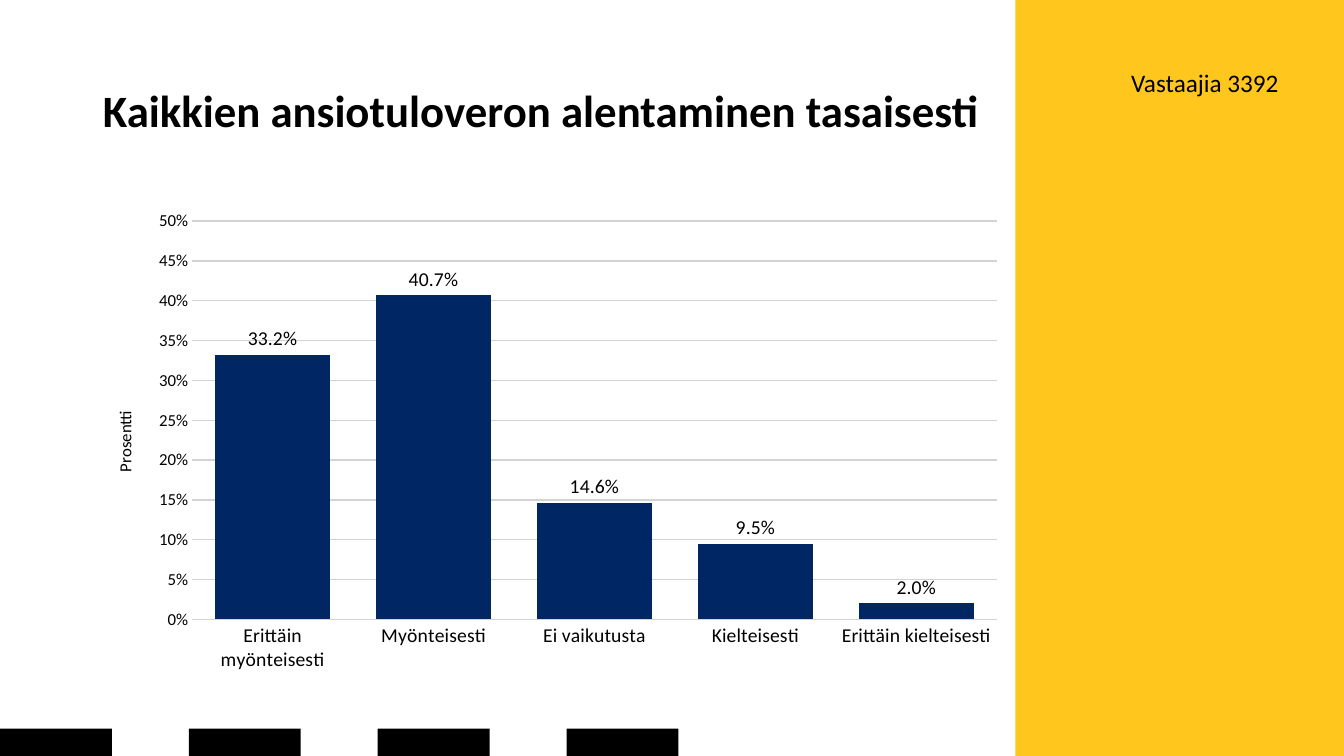
from pptx import Presentation
from pptx.chart import data
from pptx.dml.color import RGBColor
from pptx.enum import chart as charts, shapes, text
from pptx.util import Inches, Pt

COLORS = {"yellow": "FFC61E", "black": "000000", "navy": "002663",
          "grid": "D3D3D3", "white": "FFFFFF"}
FONT = "Calibri"
LEFT, PANEL_LEFT = 0.92, 10.07
WIDTH, HEIGHT = 13.33, 7.5

deck = Presentation()
deck.slide_width, deck.slide_height = Inches(WIDTH), Inches(HEIGHT)
page = deck.slides.add_slide(deck.slide_layouts[5])


def style(font, size, bold=False):
    font.name, font.size, font.bold = FONT, Pt(size), bold
    font.color.rgb = RGBColor.from_string(COLORS["black"])


def block(left, top, width, height, color):
    shape = page.shapes.add_shape(shapes.MSO_SHAPE.RECTANGLE, Inches(left),
                                  Inches(top), Inches(width), Inches(height))
    shape.shadow.inherit = False
    shape.fill.solid()
    shape.fill.fore_color.rgb = RGBColor.from_string(COLORS[color])
    shape.line.fill.background()


# Yellow side panel and the row of black blocks
block(PANEL_LEFT, 0, WIDTH - PANEL_LEFT, HEIGHT, "yellow")
for column in range(4):
    block(column * 1.873, 7.23, 1.11, 0.27, "black")

# Title
title = page.shapes.title
title.left, title.top = Inches(LEFT), Inches(0.4)
title.width, title.height = Inches(PANEL_LEFT - LEFT), Inches(1.45)
title.text_frame.word_wrap = True
title.text_frame.auto_size = text.MSO_AUTO_SIZE.NONE
title.text_frame.vertical_anchor = text.MSO_ANCHOR.MIDDLE
para = title.text_frame.paragraphs[0]
para.alignment = text.PP_ALIGN.LEFT
para.line_spacing = 0.9
span = para.add_run()
span.text = "Kaikkien ansiotuloveron alentaminen tasaisesti"
style(span.font, 32, bold=True)

# Number of respondents
box = page.shapes.add_textbox(Inches(10.71), Inches(0.62), Inches(2.07), Inches(0.4))
box.text_frame.word_wrap = True
box.text_frame.auto_size = text.MSO_AUTO_SIZE.SHAPE_TO_FIT_TEXT
para = box.text_frame.paragraphs[0]
para.alignment = text.PP_ALIGN.RIGHT
span = para.add_run()
span.text = "Vastaajia 3392"
style(span.font, 18)

# Column chart of the answers
answers = data.CategoryChartData(number_format="0.0%")
answers.categories = ["Erittäin myönteisesti", "Myönteisesti", "Ei vaikutusta",
                      "Kielteisesti", "Erittäin kielteisesti"]
answers.add_series("Series 1", [0.332, 0.407, 0.146, 0.095, 0.02])
chart = page.shapes.add_chart(
    charts.XL_CHART_TYPE.COLUMN_CLUSTERED, Inches(LEFT), Inches(2),
    Inches(PANEL_LEFT - LEFT), Inches(4.76), answers).chart
chart.has_legend = chart.has_title = False
style(chart.font, 11)

# Columns and their labels
plot = chart.plots[0]
plot.gap_width = 40
plot.vary_by_categories = False
columns = plot.series[0]
columns.format.fill.solid()
columns.format.fill.fore_color.rgb = RGBColor.from_string(COLORS["navy"])
labels = columns.data_labels
labels.show_value = True
labels.position = charts.XL_LABEL_POSITION.OUTSIDE_END
labels.number_format, labels.number_format_is_linked = "0.0%", False
style(labels.font, 14)

# Axes
for axis, size in ((chart.category_axis, 14), (chart.value_axis, 12)):
    axis.major_tick_mark = charts.XL_TICK_MARK.INSIDE
    axis.minor_tick_mark = charts.XL_TICK_MARK.NONE
    axis.format.line.fill.background()
    style(axis.tick_labels.font, size)

percent = chart.value_axis
percent.minimum_scale, percent.maximum_scale, percent.major_unit = 0, 0.5, 0.05
percent.tick_labels.number_format = "0%"
percent.tick_labels.number_format_is_linked = False
percent.has_major_gridlines = True
grid = percent.major_gridlines.format.line
grid.width = Pt(1)
grid.color.rgb = RGBColor.from_string(COLORS["grid"])
span = percent.axis_title.text_frame.paragraphs[0].add_run()
span.text = "Prosentti"
style(span.font, 12)

deck.save("out.pptx")
